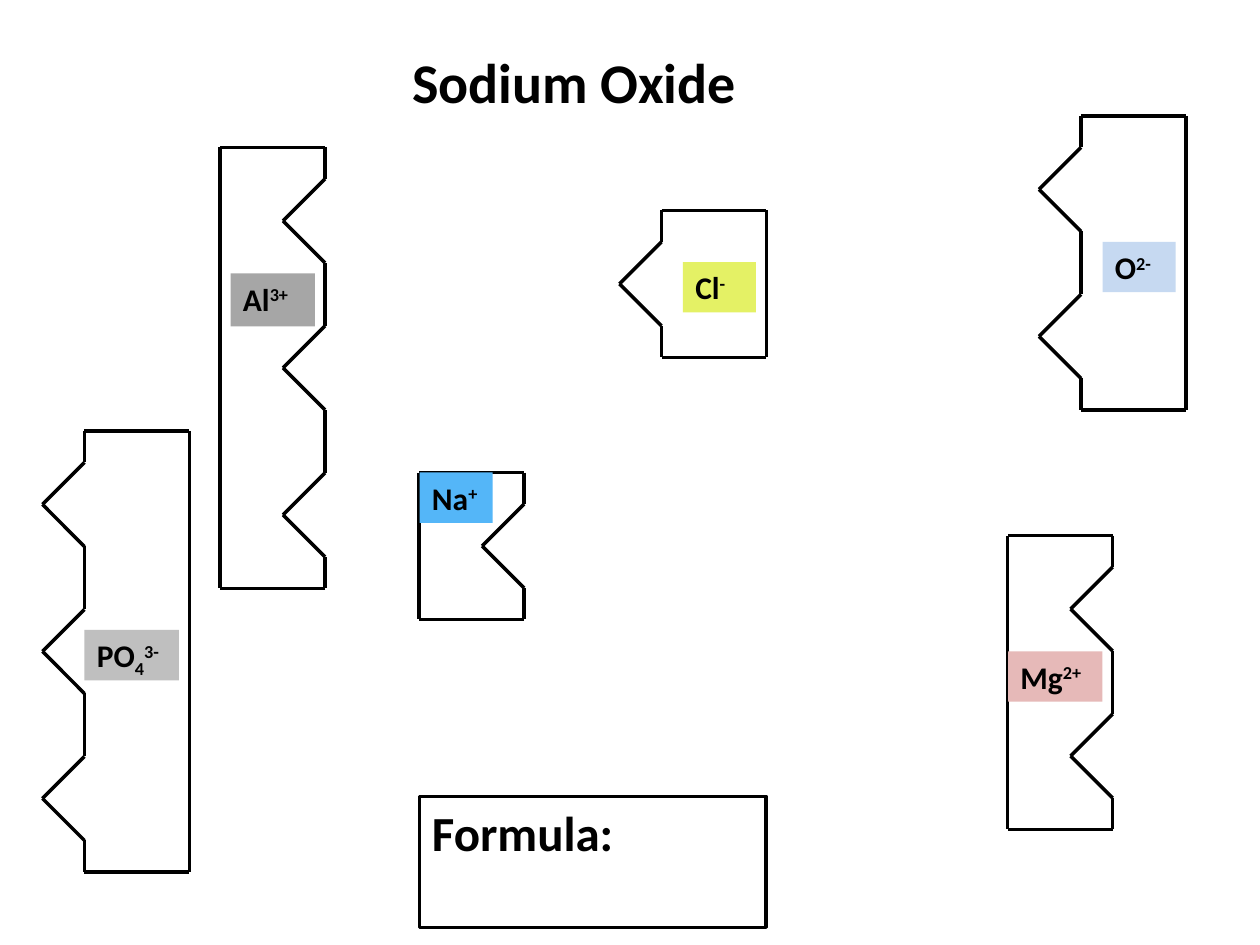
import pptx
import pptx.util
import pptx.dml.color
import pptx.enum.shapes
import pptx.enum.text
import lxml.etree

Inches = pptx.util.Inches
Pt = pptx.util.Pt


def color(hex_string):
    return pptx.dml.color.RGBColor.from_string(hex_string)


def write(s, *runs, size=18, font="Calibri", fill="000000", bold=True):
    tf = s.text_frame
    tf.word_wrap = True
    tf.auto_size = pptx.enum.text.MSO_AUTO_SIZE.NONE
    tf.vertical_anchor = pptx.enum.text.MSO_ANCHOR.TOP
    p = tf.paragraphs[0]
    p.alignment = pptx.enum.text.PP_ALIGN.LEFT
    for text, baseline in runs:
        r = p.add_run()
        r.text = text
        r.font.name = font
        r.font.size = Pt(size)
        r.font.bold = bold
        r.font.color.rgb = color(fill)
        if baseline:
            r.font._element.set("baseline", str(baseline * 1000))


prs = pptx.Presentation()
prs.slide_width = Inches(10)
prs.slide_height = Inches(7.5)
s = prs.slides.add_slide(prs.slide_layouts[5])
rect = pptx.enum.shapes.MSO_SHAPE.RECTANGLE
straight = pptx.enum.shapes.MSO_CONNECTOR.STRAIGHT

title = s.shapes.title
title.left, title.top = Inches(3.17), Inches(0.33)
title.width, title.height = Inches(3.75), Inches(0.64)
write(title, ("Sodium Oxide", 0), size=32)

formula = s.shapes.add_shape(rect, Inches(3.33), Inches(6.32), Inches(2.75), Inches(1.04))
formula.shadow.inherit = False
formula.fill.background()
formula.line.color.rgb = color("000000")
formula.line.width = Pt(2)
write(formula, ("Formula:", 0), size=28)

# toothed edge x, direction to flat edge, top, charge, label box, label fill, label runs
ions = [
    (5.25, 1, 1.67, 1, (5.42, 2.08, 0.58, 0.4), "E4F165", [("Cl", 0), ("-", 30)]),
    (8.58, 1, 0.92, 2, (8.75, 1.92, 0.58, 0.4), "C6D9F1", [("O", 0), ("2-", 30)]),
    (8.83, -1, 4.25, 2, (8, 5.17, 0.75, 0.4), "E6B9B8", [("Mg", 0), ("2+", 30)]),
    (4.16, -1, 3.75, 1, (3.33, 3.75, 0.58, 0.4), "54B6F8", [("Na", 0), ("+", 30)]),
    (2.58, -1, 1.17, 3, (1.83, 2.17, 0.67, 0.42), "A6A6A6", [("Al", 0), ("3+", 30)]),
    (0.67, 1, 3.42, 3, (0.67, 5, 0.75, 0.4), "BFBFBF", [("PO", 0), ("4", -25), ("3-", 30)]),
]
unit = 7 / 6
tooth = 1 / 3

for edge, side, top, charge, box, fill, runs in ions:
    flat = edge + side * 2.5 * tooth
    tip = edge - tooth
    bottom = top + charge * unit
    lines = [(edge, top, flat, top), (edge, bottom, flat, bottom)]
    for i in range(charge):
        y = top + i * unit
        points = [
            (edge, y),
            (edge, y + 0.25),
            (tip, y + 0.25 + tooth),
            (edge, y + 0.25 + 2 * tooth),
            (edge, y + unit),
        ]
        lines += [a + b for a, b in zip(points, points[1:])]
        lines.append((flat, y, flat, y + unit))

    group = s.shapes.add_group_shape()
    for ends in lines:
        line = group.shapes.add_connector(straight, *map(Inches, ends))
        line.line.color.rgb = color("000000")
        line.line.width = Pt(2)
        lxml.etree.SubElement(line._element.spPr, pptx.oxml.ns.qn("a:effectLst"))

    label = group.shapes.add_shape(rect, *map(Inches, box))
    label.shadow.inherit = False
    label.fill.solid()
    label.fill.fore_color.rgb = color(fill)
    label.line.fill.background()
    write(label, *runs)

prs.save("out.pptx")
